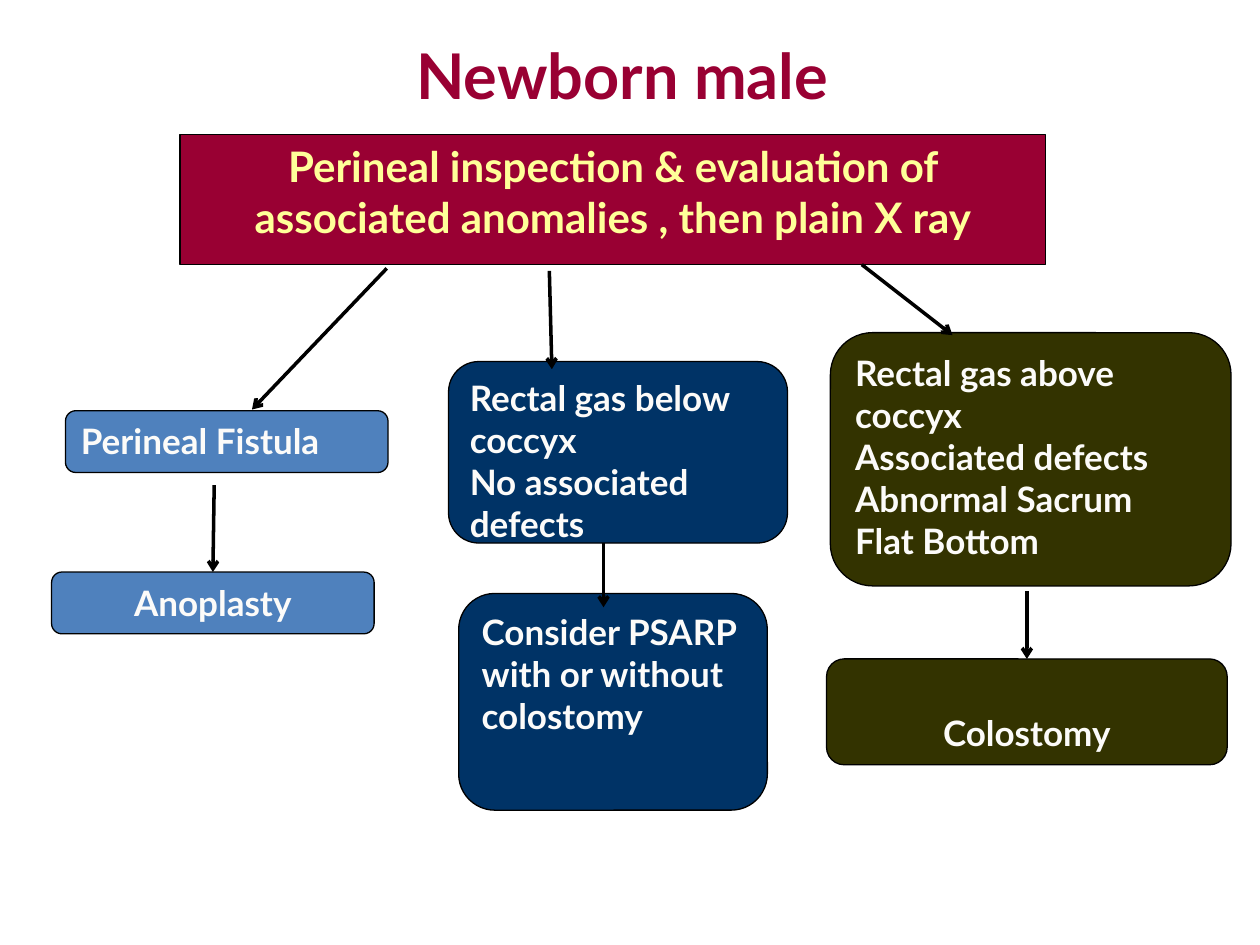
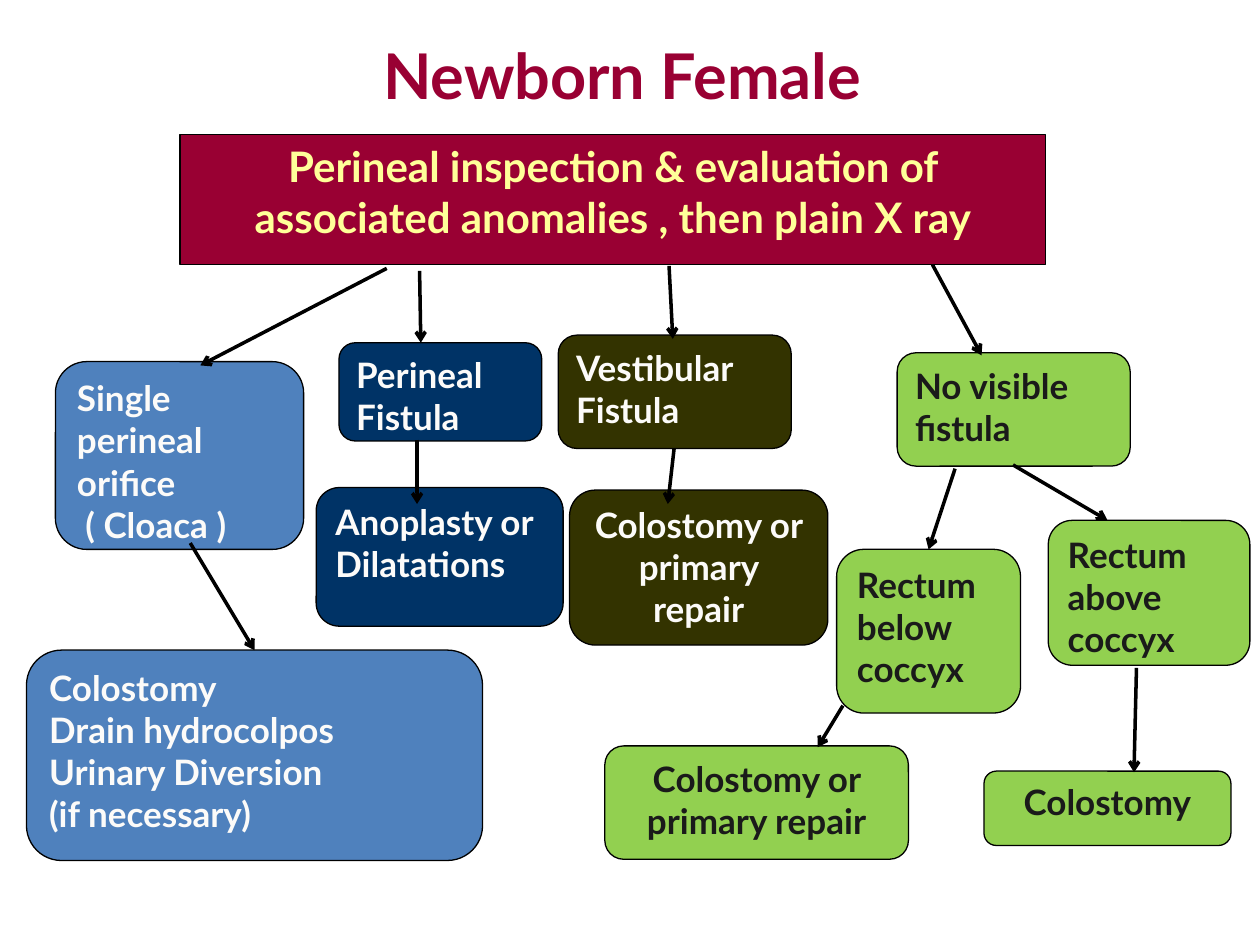
from dataclasses import dataclass
from typing import NamedTuple

from lxml import etree
from pptx import Presentation
from pptx.dml.color import RGBColor
from pptx.enum.shapes import MSO_CONNECTOR, MSO_SHAPE
from pptx.enum.text import MSO_ANCHOR, MSO_AUTO_SIZE, PP_ALIGN
from pptx.oxml.ns import qn
from pptx.util import Inches, Pt

LEFT, CENTER = PP_ALIGN.LEFT, PP_ALIGN.CENTER
TOP, MIDDLE, BOTTOM = MSO_ANCHOR.TOP, MSO_ANCHOR.MIDDLE, MSO_ANCHOR.BOTTOM
RECT, ROUND = MSO_SHAPE.RECTANGLE, MSO_SHAPE.ROUNDED_RECTANGLE
STRAIGHT = MSO_CONNECTOR.STRAIGHT
TITLE_ONLY = 5


@dataclass(frozen=True)
class Theme:
    font: str = "Lato"
    wine: str = "990033"
    cream: str = "FFFF99"
    blue: str = "4F81BD"
    navy: str = "003366"
    olive: str = "333300"
    green: str = "92D050"
    light: str = "FCFBF9"
    dark: str = "1A1A1A"
    black: str = "000000"
    title: int = 36
    head: int = 24
    body: int = 20
    edge: float = 0.75
    arrow: float = 2


THEME = Theme()


class Box(NamedTuple):
    text: str
    at: tuple[float, float, float, float]
    fill: str
    align: PP_ALIGN = LEFT
    anchor: MSO_ANCHOR = TOP
    form: MSO_SHAPE = ROUND
    size: int = THEME.body
    color: str = THEME.light


class Arrow(NamedTuple):
    x1: float
    y1: float
    x2: float
    y2: float


class Chart(NamedTuple):
    title: str
    boxes: list[Box]
    arrows: list[Arrow]


def rgb(code: str) -> RGBColor:
    return RGBColor.from_string(code)


def write(shape, text: str, *, size: int, color: str,
          align: PP_ALIGN = LEFT, anchor: MSO_ANCHOR = TOP) -> None:
    """Fill a shape with bold text, one paragraph for each line."""
    frame = shape.text_frame
    frame.word_wrap = True
    frame.auto_size = MSO_AUTO_SIZE.NONE
    frame.vertical_anchor = anchor
    frame.text = text
    for para in frame.paragraphs:
        para.alignment = align
        for run in para.runs:
            font = run.font
            font.name, font.size, font.bold = THEME.font, Pt(size), True
            font.color.rgb = rgb(color)


def draw_title(slide, text: str) -> None:
    title = slide.shapes.title
    title.left, title.top = Inches(0.5), Inches(0.3)
    title.width, title.height = Inches(9), Inches(0.58)
    write(title, text, size=THEME.title, color=THEME.wine,
          align=CENTER, anchor=MIDDLE)


def draw_box(slide, box: Box) -> None:
    shape = slide.shapes.add_shape(box.form, *map(Inches, box.at))
    shape.shadow.inherit = False
    shape.fill.solid()
    shape.fill.fore_color.rgb = rgb(box.fill)
    shape.line.color.rgb = rgb(THEME.black)
    shape.line.width = Pt(THEME.edge)
    write(shape, box.text, size=box.size, color=box.color,
          align=box.align, anchor=box.anchor)


def draw_arrow(slide, arrow: Arrow) -> None:
    link = slide.shapes.add_connector(STRAIGHT, *map(Inches, arrow))
    link.line.color.rgb = rgb(THEME.black)
    link.line.width = Pt(THEME.arrow)
    tail = etree.SubElement(link.line._get_or_add_ln(), qn("a:tailEnd"))
    tail.set("type", "arrow")
    etree.SubElement(link._element.spPr, qn("a:effectLst"))


def green(text: str, at: tuple[float, float, float, float],
          align: PP_ALIGN = LEFT) -> Box:
    return Box(text, at, THEME.green, align, color=THEME.dark)


BANNER = Box(
    "Perineal inspection & evaluation of associated anomalies , then plain X ray",
    (1.43, 1.07, 6.87, 1.03), THEME.wine, CENTER,
    form=RECT, size=THEME.head, color=THEME.cream)

MALE = Chart(
    "Newborn male ",
    [
        Box("Perineal Fistula", (0.52, 3.26, 2.56, 0.49), THEME.blue),
        Box("Anoplasty", (0.41, 4.54, 2.56, 0.49), THEME.blue, CENTER),
        Box("Rectal gas below coccyx\nNo associated defects",
            (3.56, 2.87, 2.69, 1.44), THEME.navy),
        Box("Consider PSARP with or without colostomy",
            (3.64, 4.71, 2.45, 1.72), THEME.navy),
        Box("Rectal gas above coccyx\nAssociated defects\n"
            "Abnormal Sacrum\nFlat Bottom",
            (6.59, 2.64, 3.18, 2.01), THEME.olive),
        Box("Colostomy", (6.56, 5.23, 3.18, 0.84), THEME.olive,
            CENTER, BOTTOM),
    ],
    [
        Arrow(3.07, 2.13, 2, 3.25),
        Arrow(1.7, 3.85, 1.69, 4.54),
        Arrow(4.36, 2.15, 4.38, 2.93),
        Arrow(4.79, 4.31, 4.79, 4.82),
        Arrow(6.84, 2.1, 7.56, 2.66),
        Arrow(8.15, 4.69, 8.15, 5.23),
    ])

FEMALE = Chart(
    "Newborn Female ",
    [
        Box("Single perineal orifice\n ( Cloaca )",
            (0.44, 2.87, 1.97, 1.49), THEME.blue),
        Box("Colostomy\nDrain hydrocolpos\nUrinary Diversion\n(if necessary)",
            (0.21, 5.16, 3.62, 1.67), THEME.blue),
        Box("Perineal Fistula", (2.69, 2.72, 1.61, 0.78), THEME.navy),
        Box("Anoplasty or Dilatations", (2.51, 3.87, 1.96, 1.1), THEME.navy),
        Box("Vestibular Fistula", (4.43, 2.66, 1.85, 0.9), THEME.olive),
        Box("Colostomy or primary repair", (4.52, 3.89, 2.05, 1.23),
            THEME.olive, CENTER),
        green("No visible fistula", (7.12, 2.8, 1.85, 0.9)),
        green("Rectum above\ncoccyx", (8.32, 4.13, 1.6, 1.15)),
        green("Rectum below\ncoccyx", (6.64, 4.36, 1.46, 1.3)),
        green("Colostomy or primary repair", (4.8, 5.92, 2.41, 0.9), CENTER),
        green("Colostomy", (7.81, 6.12, 1.96, 0.59), CENTER),
    ],
    [
        Arrow(3.07, 2.13, 1.59, 2.9),
        Arrow(1.51, 4.31, 2.02, 5.16),
        Arrow(3.33, 2.15, 3.34, 2.72),
        Arrow(3.31, 3.49, 3.31, 4),
        Arrow(5.31, 2.11, 5.34, 2.69),
        Arrow(5.35, 3.56, 5.3, 4),
        Arrow(7.4, 2.1, 7.79, 2.82),
        Arrow(7.58, 3.72, 7.37, 4.36),
        Arrow(8.04, 3.69, 8.79, 4.13),
        Arrow(6.69, 5.6, 6.49, 5.93),
        Arrow(9.02, 5.3, 9, 6.13),
    ])


def main() -> None:
    deck = Presentation()
    deck.slide_width, deck.slide_height = Inches(10), Inches(7.5)
    for chart in (MALE, FEMALE):
        slide = deck.slides.add_slide(deck.slide_layouts[TITLE_ONLY])
        draw_title(slide, chart.title)
        for box in (BANNER, *chart.boxes):
            draw_box(slide, box)
        for arrow in chart.arrows:
            draw_arrow(slide, arrow)
    deck.save("out.pptx")


if __name__ == "__main__":
    main()
